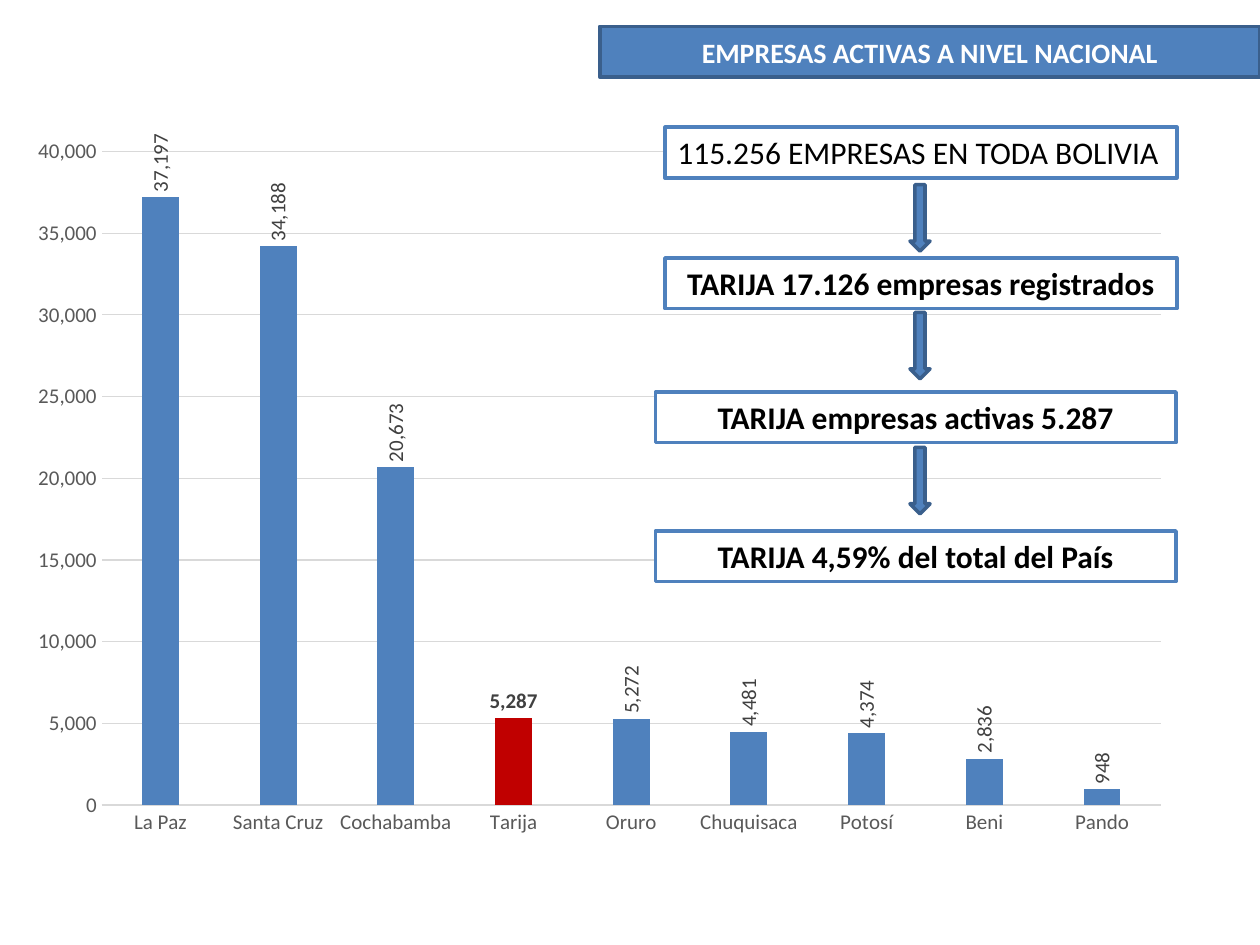
from dataclasses import dataclass

import lxml.etree
import pptx
import pptx.chart.data
import pptx.dml.color
import pptx.enum.chart
import pptx.enum.shapes
import pptx.enum.text
import pptx.oxml
import pptx.util

Pt = pptx.util.Pt
ALIGN = pptx.enum.text.PP_ALIGN
COLORS = {
    "blue": "4F81BD",
    "outline": "3A5F8C",
    "red": "C00000",
    "white": "FFFFFF",
    "black": "000000",
    "axis": "595959",
    "label": "404040",
    "grid": "D9D9D9",
}
COMPANIES = {
    "La Paz": 37197,
    "Santa Cruz": 34188,
    "Cochabamba": 20673,
    "Tarija": 5287,
    "Oruro": 5272,
    "Chuquisaca": 4481,
    "Potosí": 4374,
    "Beni": 2836,
    "Pando": 948,
}
PLOT_LAYOUT = {"x": 0.074, "y": 0.037, "w": 0.905, "h": 0.902}


@dataclass
class Box:
    text: str
    left: float
    top: float
    width: float
    bold: bool = True
    wrap: bool = True
    align: ALIGN = ALIGN.CENTER


BOX_HEIGHT = 29
BOXES = [
    Box("115.256 EMPRESAS EN TODA BOLIVIA", 380, 72.7, 292.5, False, False, ALIGN.LEFT),
    Box("TARIJA 17.126 empresas registrados", 380, 147.4, 292.5),
    Box("TARIJA empresas activas 5.287", 374.5, 224, 297.5),
    Box("TARIJA 4,59% del total del País", 374.5, 303.4, 297.5),
]
ARROW_TOPS = [105.5, 178.5, 255.6]


def rgb(name: str) -> pptx.dml.color.RGBColor:
    return pptx.dml.color.RGBColor.from_string(COLORS[name])


def apply(target, values: dict) -> None:
    for name, value in values.items():
        setattr(target, name, value)


def format_font(font, size: float, color: str, bold: bool = False) -> None:
    apply(font, {"name": "Calibri", "size": Pt(size), "bold": bold})
    font.color.rgb = rgb(color)


def paint(shape, fill: str, line: str) -> None:
    shape.fill.solid()
    shape.fill.fore_color.rgb = rgb(fill)
    shape.line.color.rgb = rgb(line)
    shape.line.width = Pt(2)


def write(shape, text: str, size: float, color: str, bold: bool, align: ALIGN) -> None:
    paragraph = shape.text_frame.paragraphs[0]
    paragraph.alignment = align
    run = paragraph.add_run()
    run.text = text
    format_font(run.font, size, color, bold)


def draw_shape(slide, kind, left: float, top: float, width: float, height: float, fill: str, line: str):
    shape = slide.shapes.add_shape(kind, Pt(left), Pt(top), Pt(width), Pt(height))
    shape.shadow.inherit = False
    paint(shape, fill, line)
    return shape


def draw_box(slide, box: Box) -> None:
    kind = pptx.enum.shapes.MSO_SHAPE.RECTANGLE
    shape = draw_shape(slide, kind, box.left, box.top, box.width, BOX_HEIGHT, "white", "blue")
    apply(shape.text_frame, {
        "word_wrap": box.wrap,
        "auto_size": pptx.enum.text.MSO_AUTO_SIZE.SHAPE_TO_FIT_TEXT,
        "vertical_anchor": pptx.enum.text.MSO_ANCHOR.TOP,
    })
    write(shape, box.text, 18, "black", box.bold, box.align)


def draw_title(slide) -> None:
    title = slide.shapes.title
    apply(title, {"left": Pt(342.7), "top": Pt(15.1), "width": Pt(377.3), "height": Pt(BOX_HEIGHT)})
    paint(title, "blue", "outline")
    apply(title.text_frame, {
        "word_wrap": True,
        "auto_size": pptx.enum.text.MSO_AUTO_SIZE.NONE,
        "vertical_anchor": pptx.enum.text.MSO_ANCHOR.MIDDLE,
    })
    write(title, "EMPRESAS ACTIVAS A NIVEL NACIONAL", 16, "white", True, ALIGN.CENTER)


def set_plot_layout(chart) -> None:
    plot_area = chart.plots[0]._element.getparent()
    for old in plot_area.findall(pptx.oxml.ns.qn("c:layout")):
        plot_area.remove(old)
    layout = lxml.etree.Element(pptx.oxml.ns.qn("c:layout"))
    manual = lxml.etree.SubElement(layout, pptx.oxml.ns.qn("c:manualLayout"))
    settings = {"layoutTarget": "inner", "xMode": "edge", "yMode": "edge", **PLOT_LAYOUT}
    for name, value in settings.items():
        lxml.etree.SubElement(manual, pptx.oxml.ns.qn(f"c:{name}"), val=str(value))
    plot_area.insert(0, layout)


def set_rotation(label, degrees: int) -> None:
    for body in label._element.iter(pptx.oxml.ns.qn("a:bodyPr")):
        body.set("rot", str(degrees * 60000))
        body.set("vert", "horz")


def format_axes(chart) -> None:
    for axis in (chart.category_axis, chart.value_axis):
        apply(axis, {
            "major_tick_mark": pptx.enum.chart.XL_TICK_MARK.NONE,
            "minor_tick_mark": pptx.enum.chart.XL_TICK_MARK.NONE,
        })
        format_font(axis.tick_labels.font, 12, "axis")
    value_axis = chart.value_axis
    apply(value_axis, {"minimum_scale": 0, "maximum_scale": 40000, "major_unit": 5000})
    apply(value_axis.tick_labels, {"number_format": "#,##0", "number_format_is_linked": False})
    value_axis.format.line.fill.background()
    for line in (chart.category_axis.format.line, value_axis.major_gridlines.format.line):
        line.color.rgb = rgb("grid")
        line.width = Pt(0.75)


def format_series(series) -> None:
    outside = pptx.enum.chart.XL_LABEL_POSITION.OUTSIDE_END
    series.format.fill.solid()
    series.format.fill.fore_color.rgb = rgb("blue")
    labels = series.data_labels
    apply(labels, {
        "show_value": True,
        "position": outside,
        "number_format": "#,##0",
        "number_format_is_linked": False,
    })
    format_font(labels.font, 12, "label")
    set_rotation(labels, -90)

    tarija = series.points[list(COMPANIES).index("Tarija")]
    tarija.format.fill.solid()
    tarija.format.fill.fore_color.rgb = rgb("red")
    label = tarija.data_label
    run = label.text_frame.paragraphs[0].add_run()
    run.text = f"{COMPANIES['Tarija']:,}"
    format_font(run.font, 12, "label", True)
    label.position = outside
    for body in label.text_frame._txBody.iter(pptx.oxml.ns.qn("a:bodyPr")):
        body.set("rot", "0")


def draw_chart(slide) -> None:
    data = pptx.chart.data.CategoryChartData(number_format="#,##0")
    data.categories = list(COMPANIES)
    data.add_series("Series 1", list(COMPANIES.values()))
    kind = pptx.enum.chart.XL_CHART_TYPE.COLUMN_CLUSTERED
    chart = slide.shapes.add_chart(kind, Pt(8.6), Pt(71.3), Pt(668.9), Pt(414), data).chart
    apply(chart, {"has_legend": False, "has_title": False})
    format_font(chart.font, 10, "black")
    apply(chart.plots[0], {"gap_width": 219, "overlap": -27, "vary_by_categories": False})
    set_plot_layout(chart)
    format_axes(chart)
    format_series(chart.plots[0].series[0])


def main() -> None:
    presentation = pptx.Presentation()
    apply(presentation, {"slide_width": Pt(720), "slide_height": Pt(540)})
    slide = presentation.slides.add_slide(presentation.slide_layouts[5])
    draw_chart(slide)
    draw_title(slide)
    for box in BOXES:
        draw_box(slide, box)
    for top in ARROW_TOPS:
        kind = pptx.enum.shapes.MSO_SHAPE.DOWN_ARROW
        draw_shape(slide, kind, 520, top, 11.5, 38, "blue", "outline")
    presentation.save("out.pptx")


if __name__ == "__main__":
    main()
